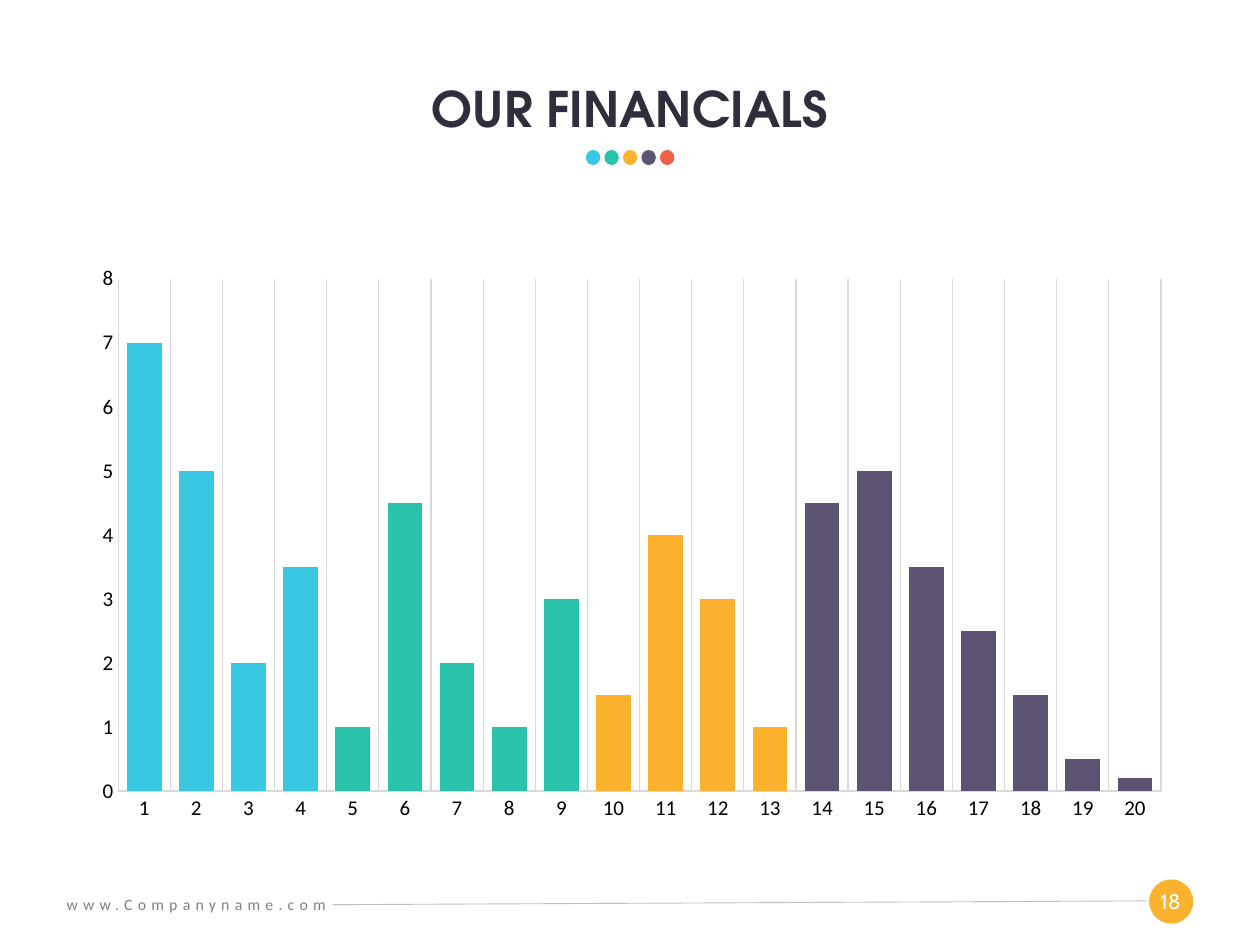
import pptx
import pptx.chart.data
import pptx.dml.color
import pptx.enum.chart
import pptx.enum.shapes
import pptx.enum.text
import pptx.util
from lxml import etree
from pptx.oxml import parse_xml
from pptx.oxml.ns import nsdecls, qn
from pptx.util import Inches

BLUE, GREEN, AMBER, PURPLE, RED = "3AC7E2", "2BC2AC", "FBB22F", "5C5271", "F15F47"
GRID = "D9D9D9"
GROUPS = [
    (BLUE, [7, 5, 2, 3.5]),
    (GREEN, [1, 4.5, 2, 1, 3]),
    (AMBER, [1.5, 4, 3, 1]),
    (PURPLE, [4.5, 5, 3.5, 2.5, 1.5, 0.5, 0.2]),
]


def rgb(color):
    """Turn a hex string into a colour."""
    return pptx.dml.color.RGBColor.from_string(color)


def box(left, top, width, height):
    """Return a position and size given in inches as lengths."""
    return [Inches(v) for v in (left, top, width, height)]


def write(tf, text, *, size, font, color, bold=False, align="LEFT", spacing=None, tracking=0):
    """Put one formatted paragraph in a text frame."""
    p = tf.paragraphs[0]
    p.alignment = getattr(pptx.enum.text.PP_ALIGN, align)
    p.line_spacing = spacing
    r = p.add_run()
    r.text = text
    r.font.size, r.font.name, r.font.bold = pptx.util.Pt(size), font, bold
    r.font.color.rgb = rgb(color)
    if tracking:
        r.font._element.set("spc", str(tracking * 100))


def add_text(s, text, at, wrap=True, **fmt):
    """Add a text box."""
    tf = s.shapes.add_textbox(*box(*at)).text_frame
    tf.word_wrap = wrap
    write(tf, text, **fmt)


def add_dot(shapes, at, color):
    """Add a plain filled circle."""
    sp = shapes.add_shape(pptx.enum.shapes.MSO_SHAPE.OVAL, *box(*at))
    sp.shadow.inherit = False
    sp.fill.solid()
    sp.fill.fore_color.rgb = rgb(color)
    sp.line.fill.background()


def add_rule(s, start, end, color, width):
    """Add a thin straight line."""
    line = s.shapes.add_connector(
        pptx.enum.shapes.MSO_CONNECTOR.STRAIGHT, *map(Inches, start + end))
    line.line.color.rgb = rgb(color)
    line.line.width = pptx.util.Pt(width)
    etree.SubElement(line._element.spPr, qn("a:effectLst"))


def add_title(s, text):
    """Place and format the title with its row of dots."""
    sp = s.shapes.title
    sp.left, sp.top, sp.width, sp.height = box(0, 0.28, 10, 0.87)
    tf = sp.text_frame
    tf.auto_size = pptx.enum.text.MSO_AUTO_SIZE.NONE
    tf.vertical_anchor = pptx.enum.text.MSO_ANCHOR.BOTTOM
    write(tf, text, size=28, font="TeX Gyre Adventor", color="322D3D",
          bold=True, align="CENTER", spacing=0.9)
    dots = s.shapes.add_group_shape()
    for i, color in enumerate((BLUE, GREEN, AMBER, PURPLE, RED)):
        add_dot(dots.shapes, (4.65 + 0.147 * i, 1.19, 0.115, 0.12), color)


def add_footer(s):
    """Add the address, the rule and the page number."""
    add_dot(s.shapes, (9.12, 6.98, 0.35, 0.35), AMBER)
    add_text(s, "18", (9.1, 7, 0.38, 0.3), wrap=False, size=12, font="Cabin",
             color="FFFFFF", align="CENTER")
    add_rule(s, (2.64, 7.18), (9.1, 7.15), "BFBFBF", 0.5)
    add_text(s, "www.Companyname.com", (0.43, 7.05, 3.2, 0.25), size=9,
             font="Calibri", color="808080", tracking=3)


def set_plot_area(chart, **parts):
    """Fix the inner plot area as fractions of the chart."""
    old = chart._chartSpace.chart.plotArea
    for layout in old.findall(qn("c:layout")):
        old.remove(layout)
    values = "".join(f'<c:{k} val="{v}"/>' for k, v in parts.items())
    old.insert(0, parse_xml(
        f'<c:layout {nsdecls("c")}><c:manualLayout><c:layoutTarget val="inner"/>'
        f'<c:xMode val="edge"/><c:yMode val="edge"/>{values}</c:manualLayout></c:layout>'))


def add_columns(s):
    """Add the column chart with one colour per group of columns."""
    columns = [(color, v) for color, values in GROUPS for v in values]
    data = pptx.chart.data.CategoryChartData()
    data.categories = [str(i + 1) for i in range(len(columns))]
    data.add_series("Series 1", [v for _, v in columns])
    chart = s.shapes.add_chart(pptx.enum.chart.XL_CHART_TYPE.COLUMN_CLUSTERED,
                               *box(0.64, 2.02, 8.75, 4.58), data).chart
    chart.has_legend = chart.has_title = False
    chart.font.size, chart.font.name = pptx.util.Pt(12), "Calibri"
    chart.font.color.rgb = rgb("000000")

    cat, val = chart.category_axis, chart.value_axis
    for axis in (cat, val):
        axis.major_tick_mark = axis.minor_tick_mark = pptx.enum.chart.XL_TICK_MARK.NONE
    cat.has_major_gridlines, val.has_major_gridlines = True, False
    for line in (cat.format.line, cat.major_gridlines.format.line):
        line.color.rgb = rgb(GRID)
        line.width = pptx.util.Pt(0.75)
    val.format.line.fill.background()
    val.minimum_scale, val.maximum_scale, val.major_unit = 0, 8, 1

    plot = chart.plots[0]
    plot.gap_width, plot.overlap, plot.vary_by_categories = 50, -27, False
    series = plot.series[0]
    series.format.fill.solid()
    series.format.fill.fore_color.rgb = rgb("19C0B4")
    for i, (color, _) in enumerate(columns):
        fill = series.points[i].format.fill
        fill.solid()
        fill.fore_color.rgb = rgb(color)
    set_plot_area(chart, x=0.034, y=0.042, w=0.946, h=0.888)


def main():
    """Build the slide and save it."""
    prs = pptx.Presentation()
    prs.slide_width, prs.slide_height = Inches(10), Inches(7.5)
    s = prs.slides.add_slide(prs.slide_layouts[5])
    add_footer(s)
    add_title(s, "OUR FINANCIALS")
    add_columns(s)
    prs.save("out.pptx")


if __name__ == "__main__":
    main()
